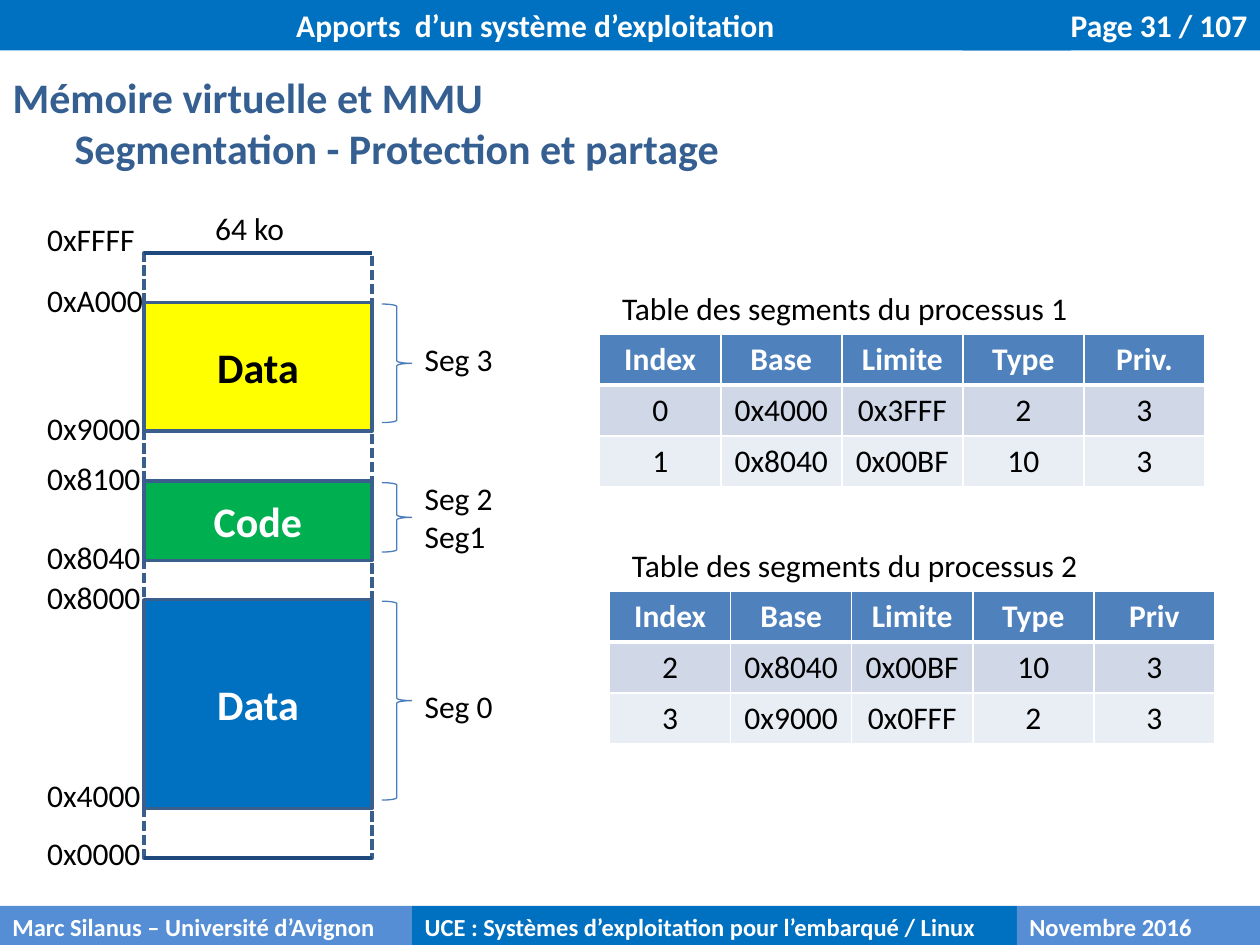
from dataclasses import dataclass

import pptx
import pptx.dml.color
import pptx.enum.dml
import pptx.enum.shapes
import pptx.enum.text
import pptx.oxml
import pptx.oxml.ns
import pptx.util
from pptx.util import Cm

ALIGN = pptx.enum.text.PP_ALIGN
ANCHOR = pptx.enum.text.MSO_ANCHOR
SHAPE = pptx.enum.shapes.MSO_SHAPE


@dataclass(frozen=True)
class Theme:
    font: str = "Calibri"
    title_size: int = 24
    body_size: int = 18
    footer_size: int = 14
    white: str = "FFFFFF"
    black: str = "000000"
    blue: str = "0070C0"
    light_blue: str = "558ED5"
    title: str = "365F91"
    outline: str = "3A5F8C"
    limit: str = "1F497D"
    brace: str = "4B7EBC"
    yellow: str = "FFFF00"
    green: str = "00B050"
    table_rows: tuple = ("4F81BD", "D0D8E8", "E9EDF4")


THEME = Theme()
MEMORY_LEFT, MEMORY_WIDTH = 2.9, 4.6
MEMORY_TOP, MEMORY_BOTTOM = 5.1, 17.3
GAP_TOPS = (MEMORY_TOP, 8.69, 11.3, 16.3)
SEGMENTS = (  # text, top, bottom, fill, text colour
    ("Data", 6.1, 8.69, THEME.yellow, THEME.black),
    ("Code", 9.7, 11.3, THEME.green, THEME.white),
    ("Data", 12.09, 16.3, THEME.blue, THEME.white),
)
ADDRESSES = (  # text, top, width
    ("0xFFFF", 4.32, 2.29),
    ("0xA000", 5.54, 2.46),
    ("0x9000", 8.13, 2.41),
    ("0x8100", 9.12, 2.41),
    ("0x8040", 10.72, 2.41),
    ("0x8000", 11.53, 2.41),
    ("0x4000", 15.52, 2.41),
    ("0x0000", 16.69, 2.41),
)
SEGMENT_NAMES = ((["Seg 3"], 6.73), (["Seg 2", "Seg1"], 9.53), (["Seg 0"], 13.72))
FOOTER = (  # text, left, width, fill
    ("Marc Silanus – Université d’Avignon", 0, 8.31, THEME.light_blue),
    ("UCE : Systèmes d’exploitation pour l’embarqué / Linux", 8.31, 12.19, THEME.blue),
    ("Novembre 2016", 20.5, 4.9, THEME.light_blue),
)
TABLES = (  # caption, left, top, rows
    ("Table des segments du processus 1", 12.09, 6.73, (
        ("Index", "Base", "Limite", "Type", "Priv."),
        ("0", "0x4000", "0x3FFF", "2", "3"),
        ("1", "0x8040", "0x00BF", "10", "3"))),
    ("Table des segments du processus 2", 12.29, 11.91, (
        ("Index", "Base", "Limite", "Type", "Priv"),
        ("2", "0x8040", "0x00BF", "10", "3"),
        ("3", "0x9000", "0x0FFF", "2", "3"))),
)


def rgb(value):
    return pptx.dml.color.RGBColor.from_string(value)


def write(frame, lines, size, color, bold=False, align=ALIGN.LEFT):
    frame.text = "\n".join(lines)
    for para in frame.paragraphs:
        para.alignment = align
        para.font.name = THEME.font
        para.font.size = pptx.util.Pt(size)
        para.font.bold = bold
        para.font.color.rgb = rgb(color)


def add_shape(page, kind, left, top, width, height, fill=None, line=None, weight=2):
    shape = page.shapes.add_shape(kind, Cm(left), Cm(top), Cm(width), Cm(height))
    shape.shadow.inherit = False
    if fill:
        shape.fill.solid()
        shape.fill.fore_color.rgb = rgb(fill)
    else:
        shape.fill.background()
    if line:
        shape.line.color.rgb = rgb(line)
        shape.line.width = pptx.util.Pt(weight)
    else:
        shape.line.fill.background()
    return shape


def add_band(page, text, left, top, width, height, fill, size, align=ALIGN.LEFT):
    band = add_shape(page, SHAPE.RECTANGLE, left, top, width, height, fill)
    band.text_frame.vertical_anchor = ANCHOR.TOP
    write(band.text_frame, [text], size, THEME.white, True, align)


def add_label(page, lines, left, top, width, wrap=False):
    height = 1.02 + 0.78 * (len(lines) - 1)
    box = page.shapes.add_textbox(Cm(left), Cm(top), Cm(width), Cm(height))
    box.text_frame.word_wrap = wrap
    write(box.text_frame, lines, THEME.body_size, THEME.black)


def add_limit(page, top):
    line = page.shapes.add_connector(
        pptx.enum.shapes.MSO_CONNECTOR.STRAIGHT,
        Cm(MEMORY_LEFT), Cm(top), Cm(MEMORY_LEFT + MEMORY_WIDTH), Cm(top))
    line.line.color.rgb = rgb(THEME.limit)
    line.line.width = pptx.util.Pt(2.25)
    line._element.spPr.append(pptx.oxml.parse_xml(
        f"<a:effectLst {pptx.oxml.ns.nsdecls('a')}/>"))


def set_borders(cell, top, bottom):
    """Draw white borders; must run before the cell is filled."""
    properties = cell._tc.get_or_add_tcPr()
    for side, points in (("L", 1), ("R", 1), ("T", top), ("B", bottom)):
        properties.append(pptx.oxml.parse_xml(
            f'<a:ln{side} {pptx.oxml.ns.nsdecls("a")} w="{points * 12700}">'
            f'<a:solidFill><a:srgbClr val="{THEME.white}"/></a:solidFill></a:ln{side}>'))


def add_segment_table(page, caption, left, top, rows):
    add_label(page, [caption], left + 0.2, top - 1.03, 10.8, wrap=True)
    table = page.shapes.add_table(
        len(rows), len(rows[0]), Cm(left), Cm(top), Cm(12.2), Cm(3.09)).table
    for column in table.columns:
        column.width = Cm(2.44)
    for index, texts in enumerate(rows):
        table.rows[index].height = Cm(1.03)
        header = index == 0
        for cell, text in zip(table.rows[index].cells, texts):
            set_borders(cell, 3 if index == 1 else 1, 3 if header else 1)
            cell.fill.solid()
            cell.fill.fore_color.rgb = rgb(THEME.table_rows[index])
            write(cell.text_frame, [text], THEME.body_size,
                  THEME.white if header else THEME.black, header, ALIGN.CENTER)


def format_title(page):
    title = page.shapes.title
    title.left, title.top, title.width, title.height = Cm(0), Cm(1.32), Cm(24.21), Cm(2.31)
    frame = title.text_frame
    frame.vertical_anchor = ANCHOR.TOP
    frame.auto_size = pptx.enum.text.MSO_AUTO_SIZE.NONE
    write(frame, ["Mémoire virtuelle et MMU", "Segmentation - Protection et partage"],
          THEME.title_size, THEME.title, True)
    frame.paragraphs[1]._p.get_or_add_pPr().set("marL", str(Cm(1.25)))


def add_memory_map(page):
    for top in GAP_TOPS:
        gap = add_shape(page, SHAPE.RECTANGLE, MEMORY_LEFT, top, MEMORY_WIDTH, 1,
                        THEME.white, THEME.outline)
        gap.line.dash_style = pptx.enum.dml.MSO_LINE.SQUARE_DOT
    for text, top, bottom, fill, color in SEGMENTS:
        block = add_shape(page, SHAPE.RECTANGLE, MEMORY_LEFT, top, MEMORY_WIDTH,
                          bottom - top, fill, THEME.outline)
        block.text_frame.vertical_anchor = ANCHOR.MIDDLE
        write(block.text_frame, [text], THEME.title_size, color, True, ALIGN.CENTER)
        add_shape(page, SHAPE.RIGHT_BRACE, 7.7, top + 0.03, 0.6, bottom - top - 0.2,
                  line=THEME.brace, weight=0.75)
    for top in (MEMORY_TOP, MEMORY_BOTTOM):
        add_limit(page, top)
    add_label(page, ["64 ko"], 4.09, 4.09, 1.91)
    for text, top, width in ADDRESSES:
        add_label(page, [text], 0.7, top, width)
    for lines, top in SEGMENT_NAMES:
        add_label(page, lines, 8.31, top, 1.91)


def main():
    deck = pptx.Presentation()
    deck.slide_width, deck.slide_height = Cm(25.4), Cm(19.05)
    page = deck.slides.add_slide(deck.slide_layouts[5])
    add_band(page, "Page 31 / 107", 19.4, 0, 6, 1.02, THEME.blue, THEME.body_size, ALIGN.RIGHT)
    add_band(page, "Apports  d’un système d’exploitation", 0, 0, 21.59, 1.02,
             THEME.blue, THEME.body_size, ALIGN.CENTER)
    format_title(page)
    for text, left, width, fill in FOOTER:
        add_band(page, text, left, 18.26, width, 0.86, fill, THEME.footer_size)
    add_memory_map(page)
    for caption, left, top, rows in TABLES:
        add_segment_table(page, caption, left, top, rows)
    deck.save("out.pptx")


if __name__ == "__main__":
    main()
